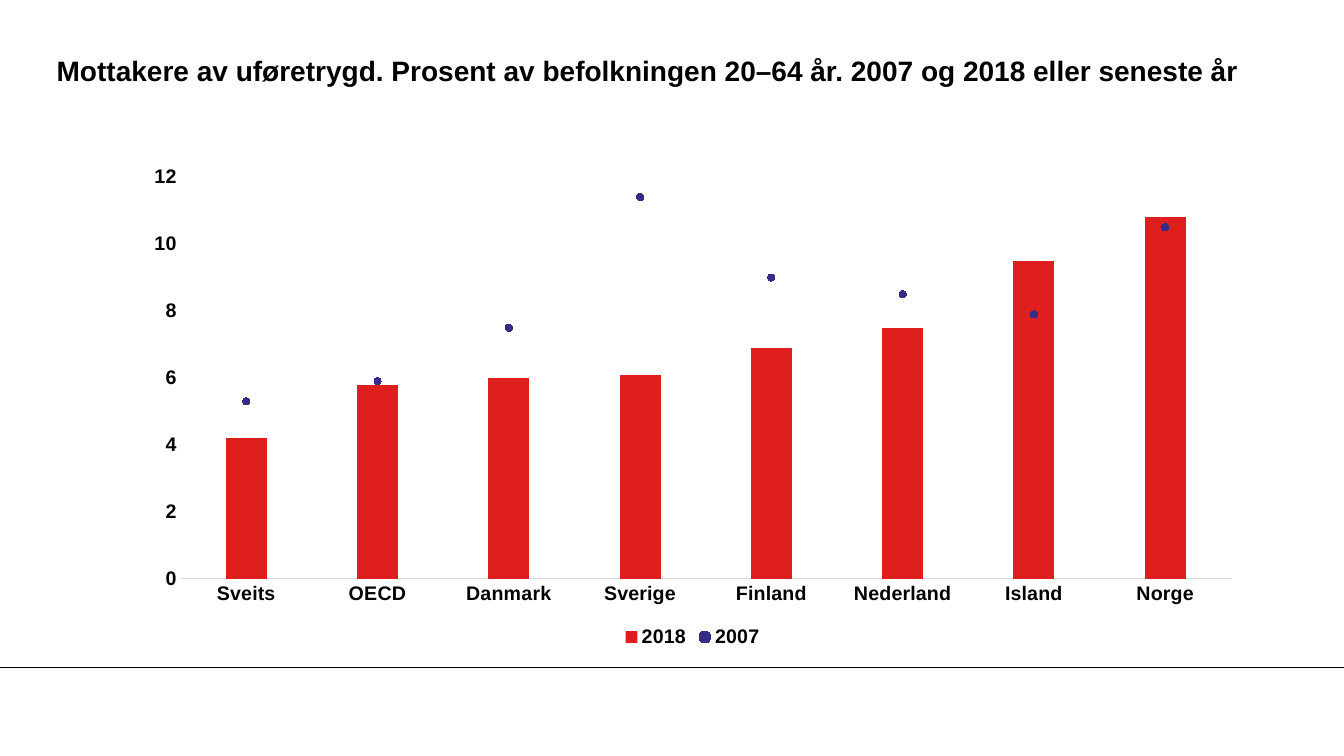
from lxml.etree import SubElement
from pptx import Presentation
from pptx.chart.data import CategoryChartData
from pptx.dml.color import RGBColor
from pptx.enum.chart import XL_CHART_TYPE, XL_LEGEND_POSITION, XL_MARKER_STYLE, XL_TICK_MARK
from pptx.enum.shapes import MSO_CONNECTOR
from pptx.enum.text import MSO_ANCHOR, MSO_AUTO_SIZE, PP_ALIGN
from pptx.oxml import parse_xml
from pptx.oxml.ns import nsdecls, qn
from pptx.util import Inches, Pt

COLORS = {"text": "000000", "axis": "D9D9D9", "2018": "DF1F1D", "2007": "342C86"}
COUNTRIES = ["Sveits", "OECD", "Danmark", "Sverige", "Finland", "Nederland", "Island", "Norge"]
RECIPIENTS = {
    "2018": [4.2, 5.8, 6, 6.1, 6.9, 7.5, 9.5, 10.8],
    "2007": [5.3, 5.9, 7.5, 11.4, 9, 8.5, 7.9, 10.5],
}


def set_values(target, **values):
    """Set each named attribute on the target."""
    for name, value in values.items():
        setattr(target, name, value)


class SlideBuilder:
    """Holds the style and the current slide."""

    def __init__(self, page, typeface="Arial"):
        """Keep the page and the typeface."""
        self.page = page
        self.typeface = typeface

    def color(self, name):
        """Look up a colour by name."""
        return RGBColor.from_string(COLORS[name])

    def style_font(self, font, size, bold=True):
        """Apply the common text style."""
        set_values(font, name=self.typeface, size=Pt(size), bold=bold)
        font.color.rgb = self.color("text")

    def paint(self, fill, name):
        """Give a fill a solid colour."""
        fill.solid()
        fill.fore_color.rgb = self.color(name)

    def add_title(self, text, left, top, width, height):
        """Place and format the title."""
        title = self.page.shapes.title
        set_values(title, left=Inches(left), top=Inches(top),
                   width=Inches(width), height=Inches(height))
        frame = title.text_frame
        set_values(frame, text=text, word_wrap=True, auto_size=MSO_AUTO_SIZE.NONE,
                   vertical_anchor=MSO_ANCHOR.MIDDLE, margin_left=0, margin_right=0,
                   margin_top=0, margin_bottom=0)
        para = frame.paragraphs[0]
        para.alignment = PP_ALIGN.CENTER
        self.style_font(para.runs[0].font, 20)

    def add_rule(self, top, width):
        """Draw a horizontal line from the left edge."""
        rule = self.page.shapes.add_connector(
            MSO_CONNECTOR.STRAIGHT, 0, Inches(top), Inches(width), Inches(top))
        rule.line.color.rgb = self.color("text")
        rule.line.width = Pt(0.75)
        SubElement(rule._element.spPr, qn("a:effectLst"))

    def add_combined_chart(self, categories, values, left, top, width, height):
        """Draw the first series as columns and the second as markers."""
        data = CategoryChartData()
        data.categories = categories
        for name, numbers in values.items():
            data.add_series(name, numbers)
        chart = self.page.shapes.add_chart(
            XL_CHART_TYPE.COLUMN_CLUSTERED, Inches(left), Inches(top),
            Inches(width), Inches(height), data).chart
        self.style_font(chart.font, 10, bold=False)
        set_values(chart, has_title=False, has_legend=True)
        set_values(chart.legend, position=XL_LEGEND_POSITION.BOTTOM, include_in_layout=False)
        self.style_font(chart.legend.font, 14)
        for axis in (chart.category_axis, chart.value_axis):
            set_values(axis, major_tick_mark=XL_TICK_MARK.NONE,
                       minor_tick_mark=XL_TICK_MARK.NONE, has_major_gridlines=False)
            self.style_font(axis.tick_labels.font, 14)
        category_line = chart.category_axis.format.line
        category_line.color.rgb = self.color("axis")
        category_line.width = Pt(0.75)
        chart.value_axis.format.line.fill.background()
        set_values(chart.value_axis, minimum_scale=0, maximum_scale=12, major_unit=2)

        self.move_last_series_to_line(chart)
        columns, points = chart.plots
        set_values(columns, gap_width=219, overlap=-27, vary_by_categories=False)
        column_series, point_series = columns.series[0], points.series[0]
        self.paint(column_series.format.fill, column_series.name)
        point_series.smooth = False
        point_series.format.line.fill.background()
        set_values(point_series.marker, style=XL_MARKER_STYLE.CIRCLE, size=5)
        self.paint(point_series.marker.format.fill, point_series.name)
        point_series.marker.format.line.color.rgb = self.color(point_series.name)

    def move_last_series_to_line(self, chart):
        """Move the last column series to a line plot on the same axes."""
        bars = chart._chartSpace.find(".//" + qn("c:barChart"))
        series = bars.findall(qn("c:ser"))[-1]
        for setting in series.findall(qn("c:invertIfNegative")):
            series.remove(setting)
        axis_ids = "".join(f'<c:axId val="{axis.get("val")}"/>'
                           for axis in bars.findall(qn("c:axId")))
        lines = parse_xml(
            f'<c:lineChart {nsdecls("c")}><c:grouping val="standard"/>'
            f'<c:varyColors val="0"/><c:marker val="1"/>{axis_ids}</c:lineChart>')
        lines.insert(2, series)
        bars.addnext(lines)


def main():
    """Build and save the slide."""
    deck = Presentation()
    set_values(deck, slide_width=Inches(13.33), slide_height=Inches(7.5))
    builder = SlideBuilder(deck.slides.add_slide(deck.slide_layouts[5]))
    builder.add_rule(6.62, 13.33)
    builder.add_title(
        "Mottakere av uføretrygd. Prosent av befolkningen 20–64 år. 2007 og 2018 eller seneste år",
        0.43, 0.32, 11.99, 0.75)
    builder.add_combined_chart(COUNTRIES, RECIPIENTS, 1.31, 1.55, 11.12, 4.92)
    deck.save("out.pptx")


if __name__ == "__main__":
    main()
